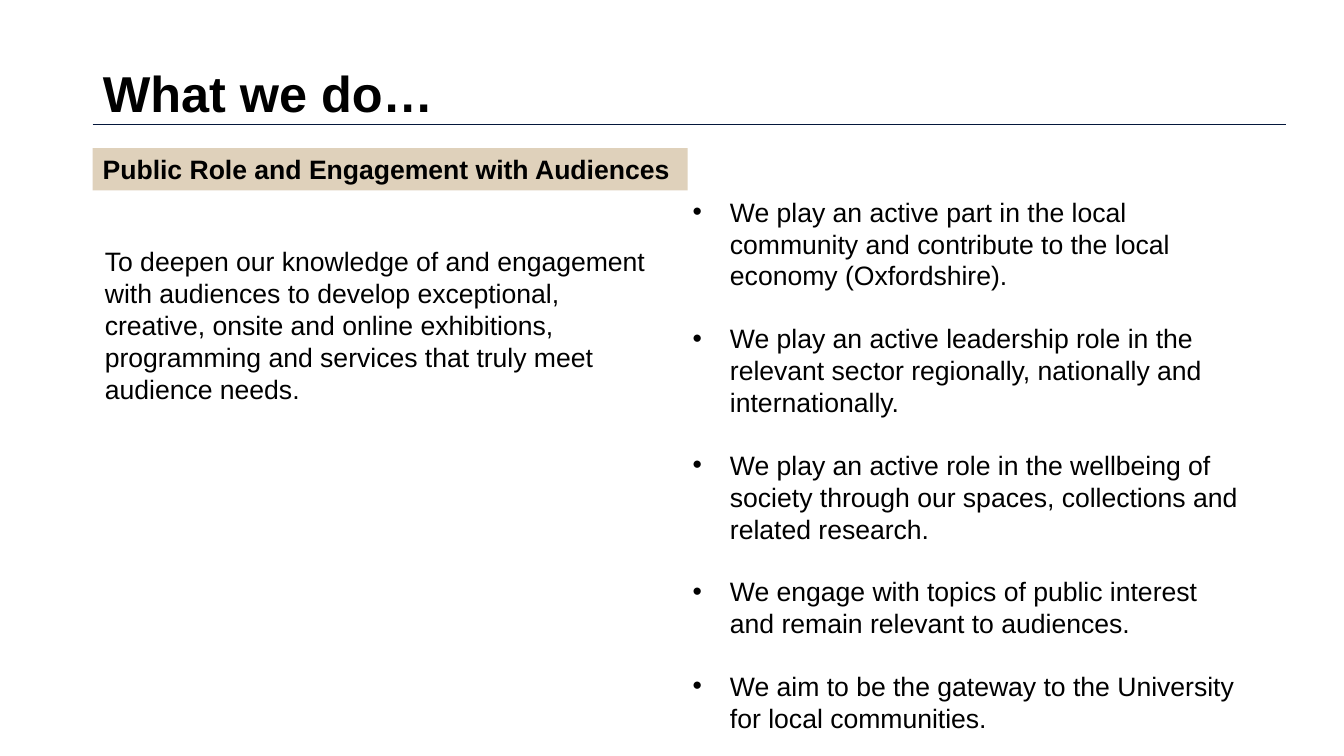
from pptx import Presentation
from pptx.dml.color import RGBColor
from pptx.enum.shapes import MSO_CONNECTOR, MSO_SHAPE
from pptx.enum.text import MSO_ANCHOR, MSO_AUTO_SIZE, PP_ALIGN
from pptx.oxml.ns import qn
from pptx.util import Inches, Pt
from lxml import etree

LEFT, TOP, MIDDLE = PP_ALIGN.LEFT, MSO_ANCHOR.TOP, MSO_ANCHOR.MIDDLE
NO_FIT, GROW = MSO_AUTO_SIZE.NONE, MSO_AUTO_SIZE.SHAPE_TO_FIT_TEXT
RECT, STRAIGHT = MSO_SHAPE.RECTANGLE, MSO_CONNECTOR.STRAIGHT

THEME = {
    "font": "Arial",
    "text": RGBColor.from_string("000000"),
    "rule": RGBColor.from_string("04173B"),
    "band": RGBColor.from_string("DFD1BB"),
    "title": Pt(36),
    "body": Pt(19),
}

# Grid: two equal columns between the side margins
MARGIN, COLUMN, GUTTER = 0.92, 5.67, 0.16
RIGHT_COLUMN = MARGIN + COLUMN + GUTTER
RULE_Y, BAND_Y, BAND_H = 1.23, 1.47, 0.42


def write(shape, *texts, size=THEME["body"], bold=False, anchor=TOP, fit=NO_FIT,
          margin=0, indent=0, bullet=None):
    """Fill a shape with one formatted paragraph per text."""
    tf = shape.text_frame
    tf.word_wrap, tf.auto_size, tf.vertical_anchor = True, fit, anchor
    for i, text in enumerate(texts):
        p = tf.paragraphs[0] if i == 0 else tf.add_paragraph()
        p.alignment, p.line_spacing = LEFT, 1.0
        p.space_before = Pt(10 if i else 0)
        p.space_after = Pt(12 if i < len(texts) - 1 else 0)
        pPr = p._p.get_or_add_pPr()
        pPr.set("marL", str(Inches(margin)))
        pPr.set("indent", str(Inches(indent)))
        if bullet:
            etree.SubElement(pPr, qn("a:buFont"), typeface=THEME["font"])
            etree.SubElement(pPr, qn("a:buChar"), char=bullet)
        else:
            etree.SubElement(pPr, qn("a:buNone"))
        r = p.add_run()
        r.text = text
        r.font.name, r.font.size, r.font.bold = THEME["font"], size, bold
        r.font.color.rgb = THEME["text"]


def place(shape, left, top, width, height):
    shape.left, shape.top = Inches(left), Inches(top)
    shape.width, shape.height = Inches(width), Inches(height)


prs = Presentation()
prs.slide_width, prs.slide_height = Inches(13.33), Inches(7.5)
s = prs.slides.add_slide(prs.slide_layouts[3])
title, aim, actions = s.placeholders

# Title
place(title, MARGIN, 0.4, 11.5, 1.04)
write(title, "What we do…", size=THEME["title"], bold=True, anchor=MIDDLE)

# Aim in the left column
place(aim, MARGIN, 2.38, COLUMN, 4.38)
write(aim,
      "To deepen our knowledge of and engagement with audiences to develop "
      "exceptional, creative, onsite and online exhibitions, programming and "
      "services that truly meet audience needs.",
      margin=0.02)

# Bulleted actions in the right column
place(actions, RIGHT_COLUMN, BAND_Y + BAND_H, COLUMN, 4.86)
write(actions,
      "We play an active part in the local community and contribute to the "
      "local economy (Oxfordshire).",
      "We play an active leadership role in the relevant sector regionally, "
      "nationally and internationally.",
      "We play an active role in the wellbeing of society through our spaces, "
      "collections and related research.",
      "We engage with topics of public interest and remain relevant to audiences.",
      "We aim to be the gateway to the University for local communities.",
      margin=0.39, indent=-0.37, bullet="•")

# Rule under the title
rule = s.shapes.add_connector(STRAIGHT, Inches(MARGIN), Inches(RULE_Y),
                              Inches(12.75), Inches(RULE_Y))
rule.line.color.rgb, rule.line.width = THEME["rule"], Pt(0.5)
etree.SubElement(rule._element.spPr, qn("a:effectLst"))

# Section heading band
band = s.shapes.add_shape(RECT, Inches(MARGIN), Inches(BAND_Y), Inches(5.9), Inches(BAND_H))
band.shadow.inherit = False
band.fill.solid()
band.fill.fore_color.rgb = THEME["band"]
band.line.fill.background()
write(band, "Public Role and Engagement with Audiences", bold=True, fit=GROW)

prs.save("out.pptx")
